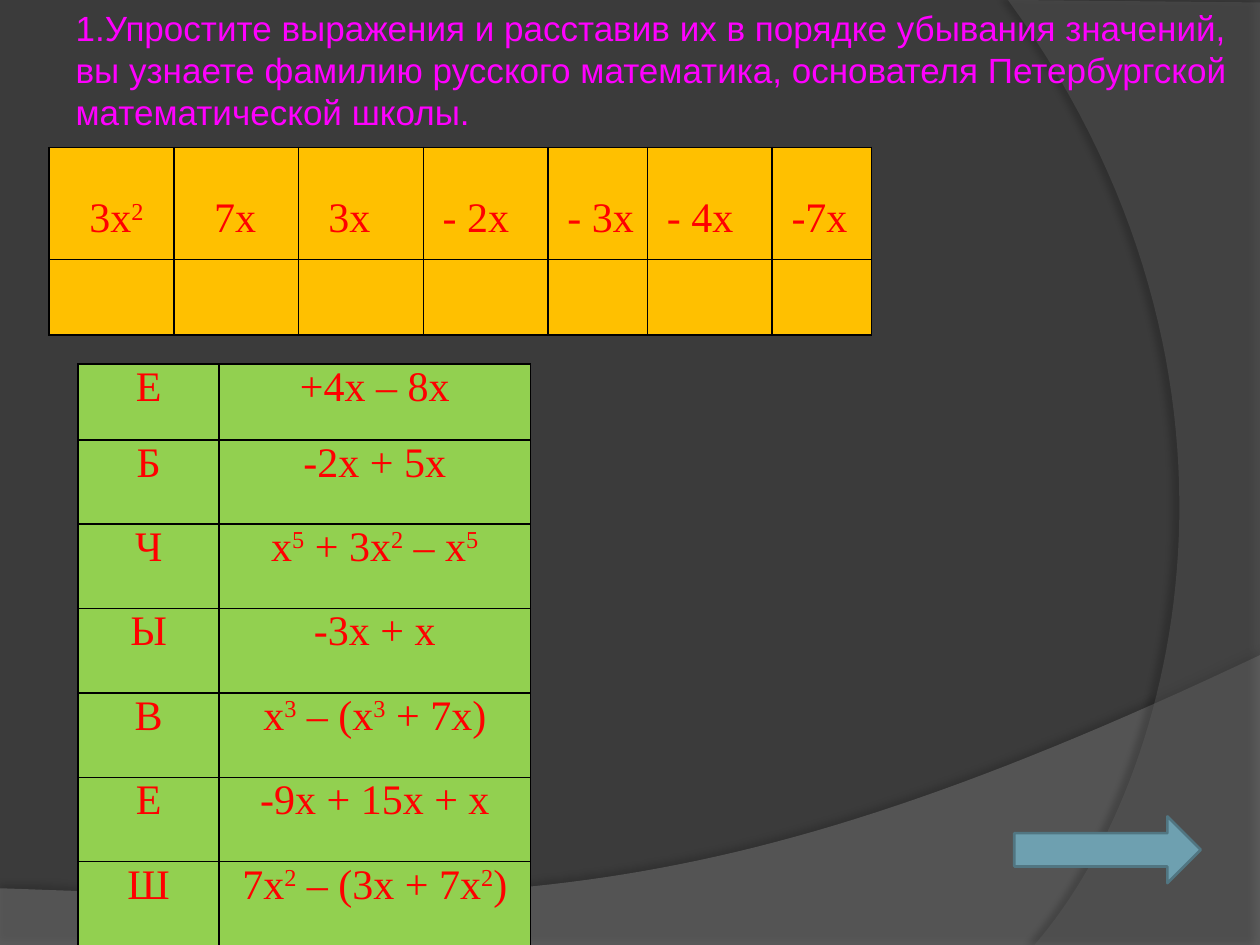
from lxml import etree
from pptx import Presentation
from pptx.dml.color import RGBColor
from pptx.enum.shapes import MSO_SHAPE
from pptx.enum.text import MSO_ANCHOR, MSO_AUTO_SIZE, PP_ALIGN
from pptx.oxml.ns import qn
from pptx.util import Inches, Pt

RIGHT_ARROW = MSO_SHAPE.RIGHT_ARROW
TOP = MSO_ANCHOR.TOP
LEFT, CENTER = PP_ALIGN.LEFT, PP_ALIGN.CENTER

COLORS = {
    "background": "3B3B3B", "hill": "7F7F7F", "arc": "5E5E5E",
    "shadow": "000000", "border": "000000", "title": "FF00FF",
    "text": "FF0000", "answers": "FFC000", "tasks": "92D050",
    "arrow": "6EA0B0", "arrow_line": "517682",
}

# Content: ^ raises the character that follows it
TITLE = ("Упростите выражения и расставив их в порядке убывания значений, "
         "вы узнаете фамилию русского математика, основателя Петербургской "
         "математической школы.")
ANSWERS = ["3х^2", "7х", "3х", "- 2х", "- 3х", "- 4х", "-7х"]
ANSWER_INDENTS = [3, 3, 2, 1, 1, 1, 1]  # in quarter ems
TASKS = [
    ("Е", "+4х – 8х"),
    ("Б", "-2х + 5х"),
    ("Ч", "х^5 + 3х^2 – х^5"),
    ("Ы", "-3х + х"),
    ("В", "х^3 – (х^3 + 7х)"),
    ("Е", "-9х + 15х + х"),
    ("Ш", "7х^2 – (3х + 7х^2)"),
]

# Layout in inches
WIDTH, HEIGHT = 10, 7.5
WIDE, NARROW = 0.99, 0.79
ANSWER_GRID = {"left": 0.39, "top": 1.17, "rows": [0.89, 0.6],
               "columns": [WIDE] * 4 + [NARROW, WIDE, NARROW]}
TASK_GRID = {"left": 0.62, "top": 2.89, "rows": [0.6] + [0.67] * 6,
             "columns": [1.12, 2.47]}
TEXT_SIZE = 24
QUARTER_EM = TEXT_SIZE / 4 / 72
LINE_HEIGHT = 0.38
CELL_INSET = 0.07

# Backdrop outlines: straight corners, then a Bezier curve from the last corner
BACKDROP = [
    {"color": "hill", "opacity": 45, "shadow": (35, 4, 3.5, 270),
     "corners": [(0, 7.05), (0, HEIGHT), (WIDTH, HEIGHT), (WIDTH, 5.2)],
     "curve": [(5.59, 7.29), (3.91, 7.19), (0, 7.05)]},
    {"color": "arc", "opacity": 40, "shadow": (45, 4, 4, 180),
     "corners": [(WIDTH, 0.02), (WIDTH, HEIGHT), (8.21, HEIGHT)],
     "curve": [(9.35, 6.19), (10.18, 3), (8, 0)]},
]
CURVE_STEPS = 60


def rgb(name):
    return RGBColor.from_string(COLORS[name])


def add_xml(parent, tag, **attributes):
    values = {key: str(value) for key, value in attributes.items()}
    return etree.SubElement(parent, qn(tag), values)


def apply_format(target, values):
    for name, value in values.items():
        setattr(target, name, value)


def set_fill(target, color):
    target.fill.solid()
    target.fill.fore_color.rgb = rgb(color)


def curve_points(points):
    for step in range(1, CURVE_STEPS + 1):
        t = step / CURVE_STEPS
        weights = ((1 - t) ** 3, 3 * t * (1 - t) ** 2, 3 * t * t * (1 - t), t ** 3)
        yield tuple(sum(weight * point[axis] for weight, point in zip(weights, points))
                    for axis in (0, 1))


def add_backdrop(slide, part):
    corners = part["corners"]
    outline = corners + list(curve_points(corners[-1:] + part["curve"]))
    points = [(Inches(x), Inches(y)) for x, y in outline]
    builder = slide.shapes.build_freeform(*points[0])
    builder.add_line_segments(points[1:], close=True)
    shape = builder.convert_to_shape()
    set_fill(shape, part["color"])
    shape.line.fill.background()
    color = next(shape.element.spPr.iter(qn("a:srgbClr")))
    add_xml(color, "a:alpha", val=part["opacity"] * 1000)
    opacity, blur, distance, angle = part["shadow"]
    effects = add_xml(shape.element.spPr, "a:effectLst")
    shadow = add_xml(effects, "a:outerShdw", blurRad=Pt(blur), dist=Pt(distance),
                     dir=angle * 60000, rotWithShape=0)
    color = add_xml(shadow, "a:srgbClr", val=COLORS["shadow"])
    add_xml(color, "a:alpha", val=opacity * 1000)


def write_title(title):
    # The tree is reordered so that the title stands in front of the backdrop
    title.element.getparent().append(title.element)
    apply_format(title, {"left": 0, "top": 0, "width": Inches(WIDTH),
                         "height": Inches(1.41)})
    apply_format(title.text_frame, {"word_wrap": True, "vertical_anchor": TOP,
                                    "auto_size": MSO_AUTO_SIZE.NONE, "text": TITLE})
    paragraph = title.text_frame.paragraphs[0]
    paragraph.alignment = LEFT
    apply_format(paragraph.runs[0].font, {"name": "Arial", "size": Pt(20)})
    paragraph.runs[0].font.color.rgb = rgb("title")
    properties = paragraph._p.get_or_add_pPr()
    apply_format_xml = {"marL": Inches(0.5), "indent": 0}
    for name, value in apply_format_xml.items():
        properties.set(name, str(value))
    add_xml(properties, "a:buFont", typeface="Arial")
    add_xml(properties, "a:buAutoNum", type="arabicPeriod")


def write_formula(paragraph, formula):
    base, *powers = formula.split("^")
    pieces = [(base, False)]
    for power in powers:
        pieces += [(power[0], True), (power[1:], False)]
    for text, raised in pieces:
        if not text:
            continue
        run = paragraph.add_run()
        run.text = text
        apply_format(run.font, {"name": "Times New Roman", "size": Pt(TEXT_SIZE)})
        run.font.color.rgb = rgb("text")
        if raised:
            run.font._element.set("baseline", "30000")


def add_grid(slide, grid, color):
    rows, columns = grid["rows"], grid["columns"]
    frame = slide.shapes.add_table(
        len(rows), len(columns), Inches(grid["left"]), Inches(grid["top"]),
        Inches(sum(columns)), Inches(sum(rows)))
    table = frame.table
    apply_format(table, {"first_row": False, "horz_banding": False})
    for column, width in zip(table.columns, columns):
        column.width = Inches(width)
    for row, height in zip(table.rows, rows):
        row.height = Inches(height)
    for cell in table.iter_cells():
        properties = cell._tc.get_or_add_tcPr()
        for side in ("a:lnL", "a:lnR", "a:lnT", "a:lnB"):
            line = add_xml(properties, side, w=Pt(1))
            add_xml(add_xml(line, "a:solidFill"), "a:srgbClr", val=COLORS["border"])
        set_fill(cell, color)
        apply_format(cell, {"margin_left": Inches(CELL_INSET), "margin_top": 0,
                            "margin_right": Inches(CELL_INSET), "margin_bottom": 0})
    return table


def main():
    presentation = Presentation()
    presentation.slide_width, presentation.slide_height = Inches(WIDTH), Inches(HEIGHT)
    slide = presentation.slides.add_slide(presentation.slide_layouts[5])
    set_fill(slide.background, "background")
    for part in BACKDROP:
        add_backdrop(slide, part)
    write_title(slide.shapes.title)

    # Answers, with an empty row for the letters
    answers = add_grid(slide, ANSWER_GRID, "answers")
    for column, (answer, indent) in enumerate(zip(ANSWERS, ANSWER_INDENTS)):
        cell = answers.cell(0, column)
        apply_format(cell, {"margin_left": Inches(CELL_INSET + indent * QUARTER_EM),
                            "margin_right": 0, "margin_top": Inches(LINE_HEIGHT)})
        write_formula(cell.text_frame.paragraphs[0], answer)

    # Letters and the expressions to simplify
    tasks = add_grid(slide, TASK_GRID, "tasks")
    for row, task in enumerate(TASKS):
        for column, text in enumerate(task):
            paragraph = tasks.cell(row, column).text_frame.paragraphs[0]
            paragraph.alignment = CENTER
            write_formula(paragraph, text)

    # Arrow to the next step
    arrow = slide.shapes.add_shape(RIGHT_ARROW, Inches(8.05), Inches(6.48),
                                   Inches(1.48), Inches(0.53))
    arrow.shadow.inherit = False
    set_fill(arrow, "arrow")
    arrow.line.color.rgb = rgb("arrow_line")
    arrow.line.width = Pt(1.5)
    presentation.save("out.pptx")


if __name__ == "__main__":
    main()
